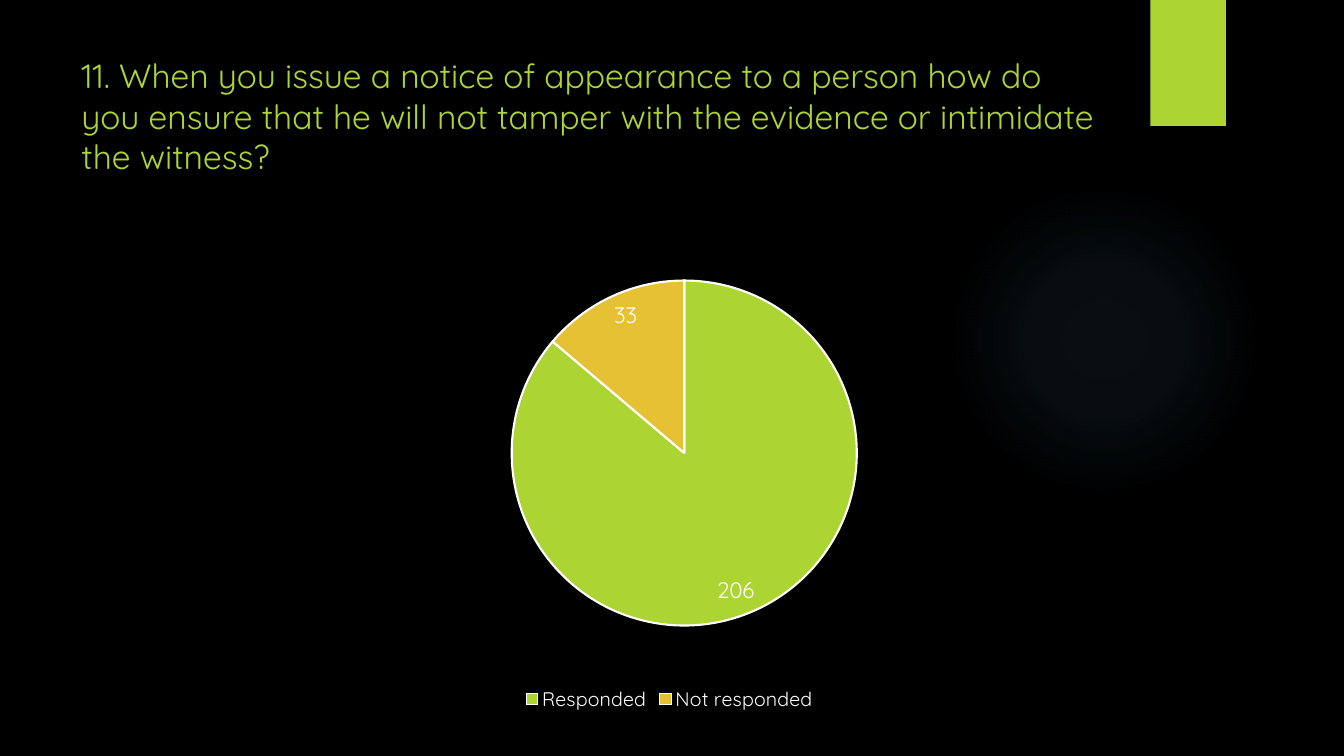
import pptx
import pptx.chart.data
import pptx.dml.color
import pptx.enum.chart
import pptx.enum.shapes
import pptx.enum.text
import pptx.oxml
import pptx.oxml.ns
import pptx.util

Inches = pptx.util.Inches
Pt = pptx.util.Pt
FONT = "Quicksand"
LIME, AMBER, WHITE, BLACK, SKY = "ACD433", "E6C133", "FFFFFF", "000000", "7AC4F0"


def color(value):
    return pptx.dml.color.RGBColor.from_string(value)


def set_format(target, values):
    for name, value in values.items():
        setattr(target, name, value)


def set_font(font, size, value):
    set_format(font, {"name": FONT, "size": Pt(size), "bold": False})
    font.color.rgb = color(value)


def set_fill(fill, value):
    fill.solid()
    fill.fore_color.rgb = color(value)


def add_plain(slide, kind, box):
    sp = slide.shapes.add_shape(kind, *map(Inches, box))
    sp.shadow.inherit = False
    sp.line.fill.background()
    return sp


def add_glow(slide, box):
    sp = add_plain(slide, pptx.enum.shapes.MSO_SHAPE.OVAL, box)
    sp.fill.background()
    stops = "".join(
        f'<a:gs pos="{pos * 1000}"><a:srgbClr val="{SKY}">'
        f'<a:alpha val="{alpha * 1000}"/></a:srgbClr></a:gs>'
        for pos, alpha in ((0, 7), (36, 6), (69, 0))
    )
    grad = pptx.oxml.parse_xml(
        f'<a:gradFill {pptx.oxml.ns.nsdecls("a")} rotWithShape="1">'
        f'<a:gsLst>{stops}</a:gsLst><a:path path="circle">'
        '<a:fillToRect l="50000" t="50000" r="50000" b="50000"/>'
        '</a:path></a:gradFill>'
    )
    spPr = sp.element.spPr
    spPr.replace(spPr.find(pptx.oxml.ns.qn("a:noFill")), grad)


def add_tab(slide, box):
    sp = add_plain(slide, pptx.enum.shapes.MSO_SHAPE.RECTANGLE, box)
    set_fill(sp.fill, LIME)


def add_question(slide, box, text):
    tf = slide.shapes.add_textbox(*map(Inches, box)).text_frame
    set_format(tf, {
        "word_wrap": True,
        "auto_size": pptx.enum.text.MSO_AUTO_SIZE.NONE,
        "vertical_anchor": pptx.enum.text.MSO_ANCHOR.TOP,
    })
    r = tf.paragraphs[0].add_run()
    r.text = text
    set_font(r.font, 24, LIME)


def add_pie(slide, box, answers):
    data = pptx.chart.data.CategoryChartData()
    data.categories = list(answers)
    data.add_series("Series 1", list(answers.values()))
    chart = slide.shapes.add_chart(
        pptx.enum.chart.XL_CHART_TYPE.PIE, *map(Inches, box), data
    ).chart
    set_font(chart.font, 10, WHITE)
    set_format(chart, {"has_title": False, "has_legend": True})
    set_format(chart.legend, {
        "position": pptx.enum.chart.XL_LEGEND_POSITION.BOTTOM,
        "include_in_layout": False,
    })
    set_font(chart.legend.font, 14, WHITE)

    plot = chart.plots[0]
    plot.vary_by_categories = True
    series = plot.series[0]
    for i, value in enumerate((LIME, AMBER)):
        fmt = series.points[i].format
        set_fill(fmt.fill, value)
        fmt.line.color.rgb = color(WHITE)
        fmt.line.width = Pt(1.5)
    labels = series.data_labels
    set_format(labels, {
        "show_value": True,
        "show_percentage": False,
        "position": pptx.enum.chart.XL_LABEL_POSITION.INSIDE_END,
    })
    set_font(labels.font, 16, WHITE)

    plot_area = plot._element.getparent()
    for layout in plot_area.findall(pptx.oxml.ns.qn("c:layout")):
        plot_area.remove(layout)
    edges = "".join(
        f'<c:{name} val="{value}"/>'
        for name, value in (
            ("layoutTarget", "inner"), ("xMode", "edge"), ("yMode", "edge"),
            ("x", 0.34), ("y", 0.16), ("w", 0.35), ("h", 0.68),
        )
    )
    plot_area.insert(0, pptx.oxml.parse_xml(
        f'<c:layout {pptx.oxml.ns.nsdecls("c")}>'
        f'<c:manualLayout>{edges}</c:manualLayout></c:layout>'
    ))


def main():
    prs = pptx.Presentation()
    set_format(prs, {"slide_width": Inches(13.33), "slide_height": Inches(7.5)})
    s = prs.slides.add_slide(prs.slide_layouts[6])
    set_fill(s.background.fill, BLACK)
    add_glow(s, (9.41, 1.83, 3.08, 3.08))
    add_tab(s, (11.41, 0, 0.75, 1.25))
    add_question(
        s, (0.71, 0.5, 10.29, 1.53),
        "11. When you issue a notice of appearance to a person how do you ensure "
        "that he will not tamper with the evidence or intimidate the witness?",
    )
    add_pie(s, (1.75, 1.89, 9.78, 5.21), {"Responded": 206, "Not responded": 33})
    prs.save("out.pptx")


if __name__ == "__main__":
    main()
